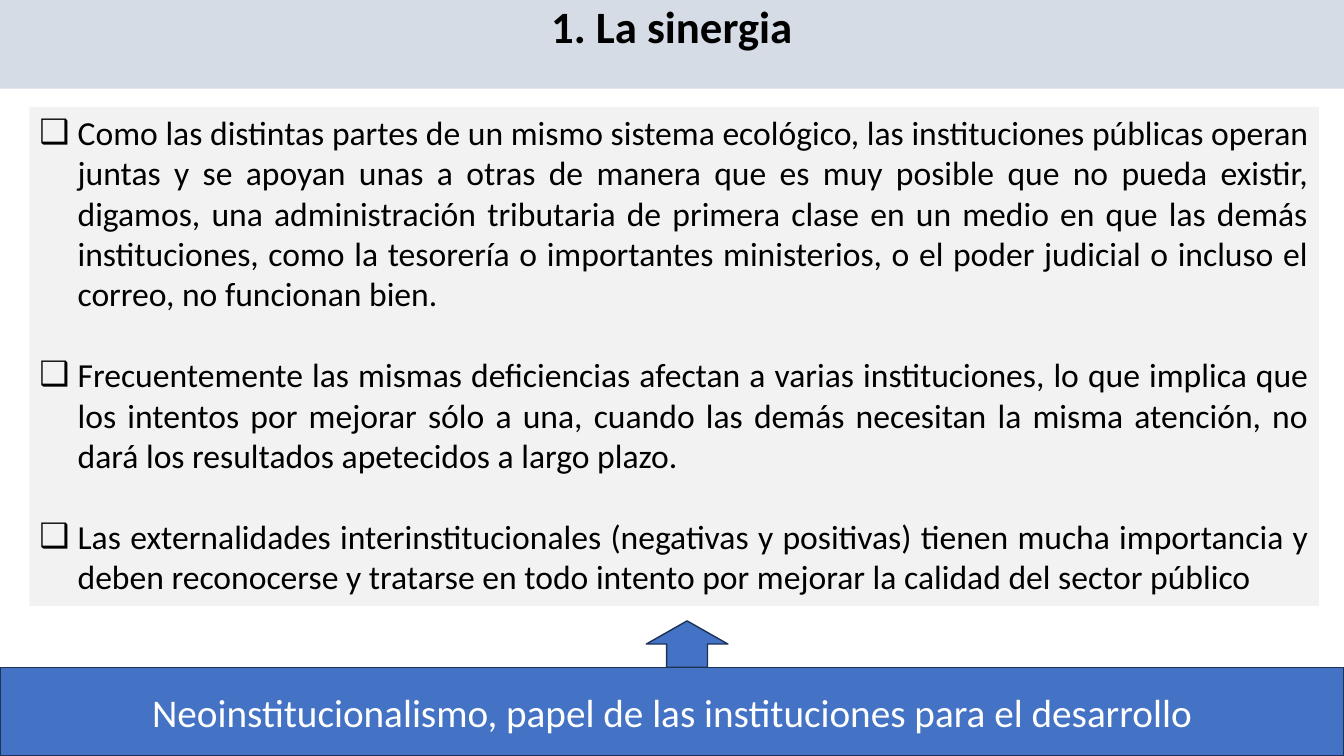
from lxml.etree import SubElement
from pptx import Presentation
from pptx.dml.color import RGBColor
from pptx.enum.shapes import MSO_SHAPE as SHAPE
from pptx.enum.text import MSO_ANCHOR as ANCHOR, MSO_AUTO_SIZE as AUTO, PP_ALIGN as ALIGN
from pptx.oxml.ns import qn
from pptx.util import Inches, Pt

TITLE = "1. La sinergia"
POINTS = [
    "Como las distintas partes de un mismo sistema ecológico, las instituciones públicas operan "
    "juntas y se apoyan unas a otras de manera que es muy posible que no pueda existir, digamos, "
    "una administración tributaria de primera clase en un medio en que las demás instituciones, "
    "como la tesorería o importantes ministerios, o el poder judicial o incluso el correo, "
    "no funcionan bien.",
    "Frecuentemente las mismas deficiencias afectan a varias instituciones, lo que implica que "
    "los intentos por mejorar sólo a una, cuando las demás necesitan la misma atención, "
    "no dará los resultados apetecidos a largo plazo.",
    "Las externalidades interinstitucionales (negativas y positivas) tienen mucha importancia "
    "y deben reconocerse y tratarse en todo intento por mejorar la calidad del sector público",
]
FOOTER = "Neoinstitucionalismo, papel de las instituciones para el desarrollo"

FONT = "Calibri"
BLUE, EDGE = "4472C4", "1E3256"
W, H = 13.33, 7.5
BAND = 0.88
BODY = (0.29, 1.06, 12.79, 4.95)
ARROW_W, ARROW_H = 0.81, 0.46
ARROW_X = 6.41
INDENT = 0.38


def color(value):
    return RGBColor.from_string(value)


def place(sp, box, fill, line=None):
    sp.left, sp.top, sp.width, sp.height = map(Inches, box)
    sp.fill.solid()
    sp.fill.fore_color.rgb = color(fill)
    if line:
        sp.shadow.inherit = False
        sp.line.color.rgb = color(line)
        sp.line.width = Pt(1)


def write(sp, lines, size, ink, align, anchor, bold=False, spacing=1.0):
    tf = sp.text_frame
    tf.text = "\n".join(lines)
    tf.word_wrap = True
    tf.auto_size = AUTO.NONE
    tf.vertical_anchor = anchor
    for p in tf.paragraphs:
        p.alignment = align
        p.line_spacing = spacing
        p.space_before = p.space_after = Pt(0)
        for r in p.runs:
            r.font.name, r.font.size, r.font.bold = FONT, Pt(size), bold
            r.font.color.rgb = color(ink)


def bullet(p):
    pPr = p._p.get_or_add_pPr()
    pPr.set("marL", str(Inches(INDENT)))
    pPr.set("indent", str(-Inches(INDENT)))
    SubElement(pPr, qn("a:buChar")).set("char", "❑")


def main():
    """Build the slide about synergy between institutions."""
    prs = Presentation()
    prs.slide_width, prs.slide_height = Inches(W), Inches(H)
    s = prs.slides.add_slide(prs.slide_layouts[1])

    title, body = s.placeholders
    place(title, (0, 0, W, BAND), "D6DCE5")
    write(title, [TITLE], 32, "000000", ALIGN.CENTER, ANCHOR.TOP, bold=True, spacing=0.9)

    place(body, BODY, "F2F2F2")
    write(body, POINTS, 24, "000000", ALIGN.JUSTIFY, ANCHOR.TOP)
    for i, p in enumerate(body.text_frame.paragraphs):
        p.space_before = Pt(29 if i else 0)
        bullet(p)

    footer = s.shapes.add_shape(SHAPE.RECTANGLE, 0, 0, 0, 0)
    place(footer, (0, H - BAND, W, BAND), BLUE, EDGE)
    write(footer, [FOOTER], 28, "FFFFFF", ALIGN.CENTER, ANCHOR.MIDDLE)

    arrow = s.shapes.add_shape(SHAPE.UP_ARROW, 0, 0, 0, 0)
    place(arrow, (ARROW_X, H - BAND - ARROW_H, ARROW_W, ARROW_H), BLUE, EDGE)

    prs.save("out.pptx")


if __name__ == "__main__":
    main()
